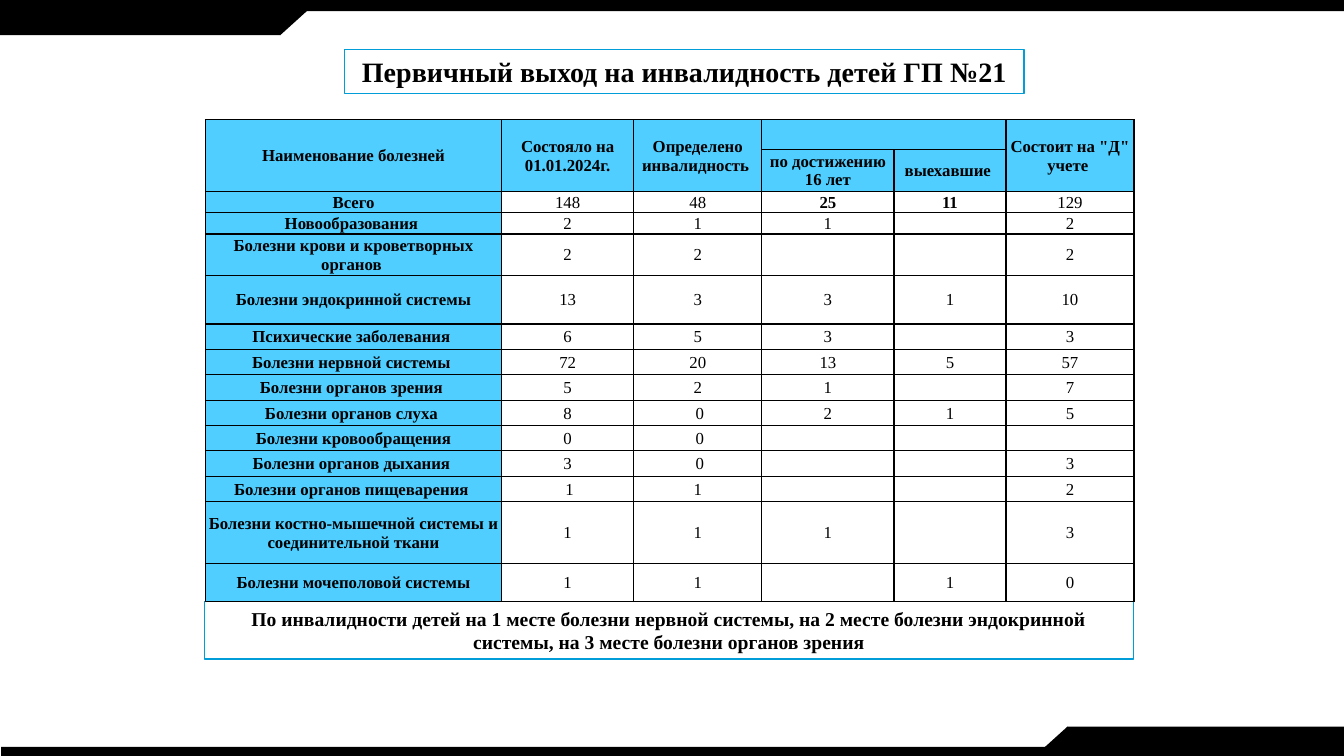
from lxml import etree
from pptx import Presentation
from pptx.dml.color import RGBColor
from pptx.enum.shapes import MSO_SHAPE
from pptx.enum.text import MSO_ANCHOR, MSO_AUTO_SIZE, PP_ALIGN
from pptx.oxml.ns import qn
from pptx.util import Cm, Pt

RECT = MSO_SHAPE.RECTANGLE
MERGE = MSO_SHAPE.FLOWCHART_MERGE
MIDDLE = MSO_ANCHOR.MIDDLE
CENTER = PP_ALIGN.CENTER
GROW = MSO_AUTO_SIZE.SHAPE_TO_FIT_TEXT

THEME = {
    "font": "Times New Roman",
    "black": RGBColor(0, 0, 0),
    "white": RGBColor(255, 255, 255),
    "sky": RGBColor(0x4F, 0xCE, 0xFF),
    "edge": RGBColor(0x00, 0x9D, 0xD9),
    "title": Pt(20),
    "note": Pt(14),
    "cell": Pt(12),
    "line": Pt(1),
}


def add_box(kind, left, top, width, height, fill):
    box = slide.shapes.add_shape(kind, Cm(left), Cm(top), Cm(width), Cm(height))
    box.shadow.inherit = False
    box.fill.solid()
    box.fill.fore_color.rgb = fill
    box.line.fill.background()
    return box


def set_text(frame, text, size, bold):
    frame.text = text
    para = frame.paragraphs[0]
    para.alignment = CENTER
    for run in para.runs:
        run.font.name = THEME["font"]
        run.font.size = size
        run.font.bold = bold
        run.font.color.rgb = THEME["black"]
    if not text:
        etree.SubElement(para._p, qn("a:endParaRPr"), sz=str(int(size.pt * 100)))


deck = Presentation()
deck.slide_width = Cm(33.87)
deck.slide_height = Cm(19.05)
slide = deck.slides.add_slide(deck.slide_layouts[6])

bars = [
    (RECT, 0, 0, 33.87, 0.28, 0),
    (RECT, 0.03, 18.82, 33.84, 0.28, 0),
    (RECT, 0, 0.13, 7.06, 0.76, 0),
    (MERGE, 6.22, 0.13, 1.68, 0.76, 0),
    (RECT, 26.9, 18.31, 7.06, 0.76, 0),
    (MERGE, 26.06, 18.31, 1.68, 0.76, 180),
]
for *place, turn in bars:
    bar = add_box(*place, THEME["black"])
    bar.rotation = turn

notes = [
    (8.69, 1.25, 17.12, 1.11, "title", "Первичный выход на инвалидность детей ГП №21"),
    (5.15, 15.16, 23.42, 1.45, "note",
     "По инвалидности детей на 1 месте болезни нервной системы, на 2 месте "
     "болезни эндокринной системы, на 3 месте болезни органов зрения"),
]
for *place, size, text in notes:
    box = add_box(RECT, *place, THEME["white"])
    box.line.color.rgb = THEME["edge"]
    box.line.width = THEME["line"]
    frame = box.text_frame
    frame.word_wrap = True
    frame.auto_size = GROW
    frame.vertical_anchor = MIDDLE
    set_text(frame, text, THEME[size], True)

rows = [
    ["Наименование болезней", "Состояло на 01.01.2024г.", "Определено инвалидность ",
     "", "", "Состоит на \"Д\" учете "],
    ["", "", "", "по достижению 16 лет", "выехавшие ", ""],
    ["Всего", "148", "48", "25", "11", "129"],
    ["Новообразования ", "2", "1", "1", "", "2"],
    ["Болезни крови и кроветворных органов ", "2", "2", "", "", "2"],
    ["Болезни эндокринной системы", "13", "3", "3", "1", "10"],
    ["Психические заболевания ", "6", "5", "3", "", "3"],
    ["Болезни нервной системы ", "72", "20", "13", "5", "57"],
    ["Болезни органов зрения ", "5", "2", "1", "", "7"],
    ["Болезни органов слуха ", "8", " 0", "2", "1", "5"],
    ["Болезни кровообращения", "0", " 0", "", "", ""],
    ["Болезни органов дыхания ", "3", " 0", "", "", "3"],
    ["Болезни органов пищеварения ", " 1", "1", "", "", "2"],
    ["Болезни костно-мышечной системы и соединительной ткани", "1", "1", "1", "", "3"],
    ["Болезни мочеполовой системы", "1", "1", "", "1", "0"],
]
widths = [7.46, 3.33, 3.23, 3.33, 2.82, 3.23]
heights = [0.75, 1.03, 0.52, 0.52, 1.02, 1.22] + [0.64] * 7 + [1.56, 0.95]

grid = slide.shapes.add_table(
    len(rows), len(widths), Cm(5.18), Cm(3.02), Cm(sum(widths)), Cm(sum(heights))
).table
grid.first_row = False
grid.horz_banding = False
for col, width in zip(grid.columns, widths):
    col.width = Cm(width)
for row, height in zip(grid.rows, heights):
    row.height = Cm(height)

for i, row in enumerate(rows):
    for j, text in enumerate(row):
        cell = grid.cell(i, j)
        head = i < 2 or j == 0
        cell.fill.solid()
        cell.fill.fore_color.rgb = THEME["sky"] if head else THEME["white"]
        cell.margin_left = cell.margin_right = cell.margin_top = Cm(0.03)
        cell.margin_bottom = 0
        cell.vertical_anchor = MIDDLE
        set_text(cell.text_frame, text, THEME["cell"], head or (i == 2 and j in (3, 4)))
        props = cell._tc.get_or_add_tcPr()
        for k, side in enumerate(("lnL", "lnR", "lnT", "lnB")):
            edge = etree.Element(qn("a:" + side), w=str(THEME["line"]))
            solid = etree.SubElement(edge, qn("a:solidFill"))
            etree.SubElement(solid, qn("a:srgbClr"), val=str(THEME["black"]))
            props.insert(k, edge)

for j in (0, 1, 2, 5):
    grid.cell(0, j).merge(grid.cell(1, j))
grid.cell(0, 3).merge(grid.cell(0, 4))

deck.save("out.pptx")
